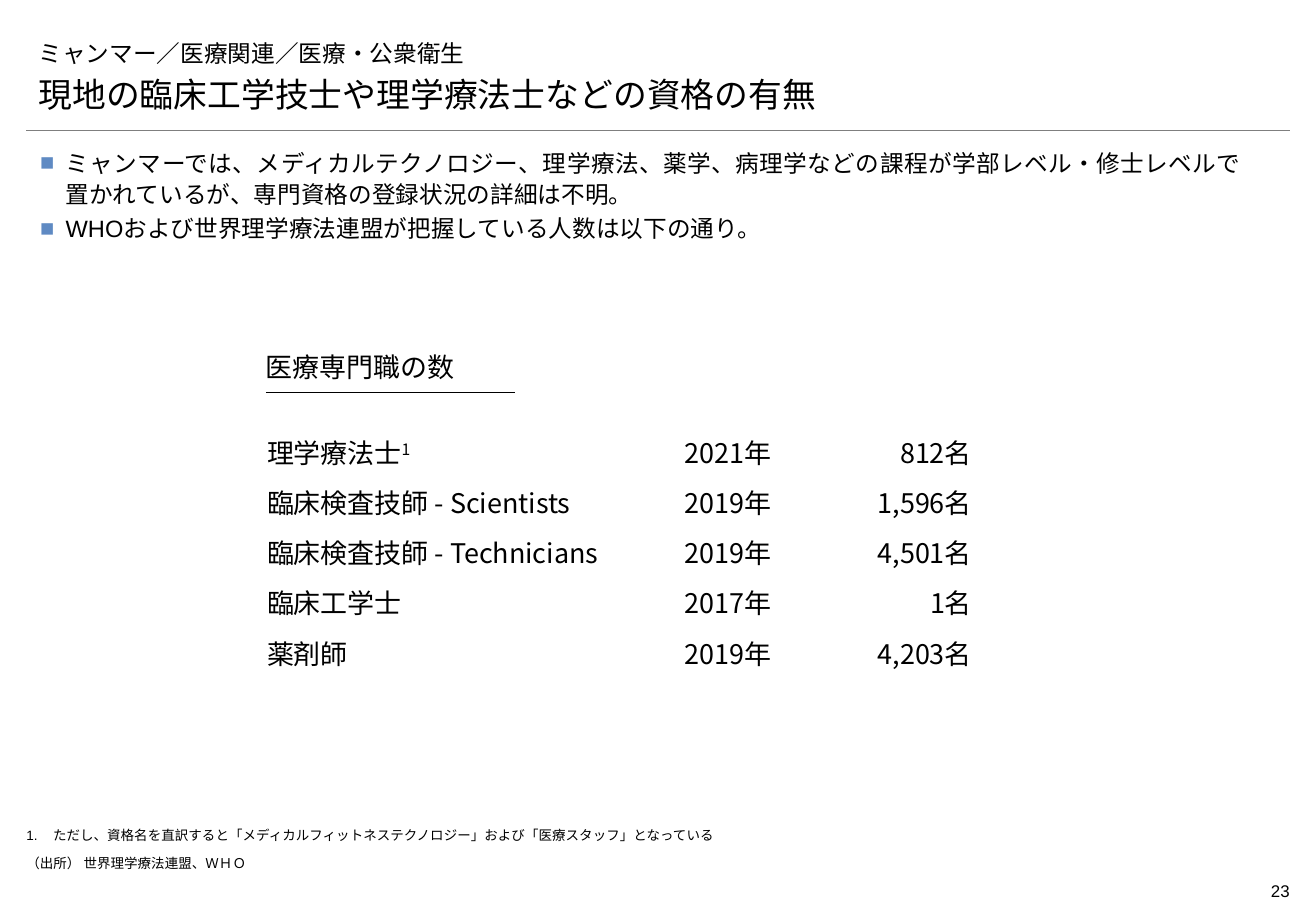
import pptx
import pptx.util
import pptx.dml.color
import pptx.enum.shapes
import pptx.enum.text
import pptx.oxml
import pptx.oxml.ns

ALIGN = pptx.enum.text.PP_ALIGN
ANCHOR = pptx.enum.text.MSO_ANCHOR
NS = pptx.oxml.ns.nsdecls("a")
COLORS = {"text": "000000", "rule": "7F7F7F", "bullet": "5F8AC3"}
CJK = "Noto Sans CJK JP"

prs = pptx.Presentation()
prs.slide_width = pptx.util.Inches(10.83)
prs.slide_height = pptx.util.Inches(7.5)
s = prs.slides.add_slide(prs.slide_layouts[3])


def grid(col, row, cols, rows):
    """Turn cells of a 100 by 100 slide grid into lengths."""
    x, y = prs.slide_width / 100, prs.slide_height / 100
    return int(col * x), int(row * y), int(cols * x), int(rows * y)


def write(tf, text, size=16, font="Arial", align=ALIGN.LEFT, anchor=ANCHOR.TOP,
          insets=(0, 0, 0, 0), bullet=None, indent=0, spacing=1, after=0, sup=None):
    tf.word_wrap = True
    tf.auto_size = pptx.enum.text.MSO_AUTO_SIZE.NONE
    tf.vertical_anchor = anchor
    tf.margin_left, tf.margin_top, tf.margin_right, tf.margin_bottom = map(pptx.util.Inches, insets)
    for i, line in enumerate(text.split("\n")):
        p = tf.add_paragraph() if i else tf.paragraphs[0]
        pPr = p._p.get_or_add_pPr()
        pPr.set("marL", str(pptx.util.Inches(indent)))
        pPr.set("indent", str(-pptx.util.Inches(indent)))
        if bullet:
            pPr.append(pptx.oxml.parse_xml(
                f'<a:buClr {NS}><a:srgbClr val="{COLORS["bullet"]}"/></a:buClr>'))
            pPr.append(pptx.oxml.parse_xml(f'<a:buFont {NS} typeface="Arial"/>'))
            pPr.append(pptx.oxml.parse_xml(f'<a:buChar {NS} char="{bullet}"/>'))
        else:
            pPr.append(pptx.oxml.parse_xml(f"<a:buNone {NS}/>"))
        p.alignment, p.line_spacing = align, spacing
        p.space_before, p.space_after = pptx.util.Pt(0), pptx.util.Pt(after)
        for part in filter(None, (line, sup)):
            r = p.add_run()
            r.text = part
            r.font.size, r.font.name = pptx.util.Pt(size), font
            r.font.color.rgb = pptx.dml.color.RGBColor.from_string(COLORS["text"])
            rPr = r._r.get_or_add_rPr()
            rPr.append(pptx.oxml.parse_xml(f'<a:ea {NS} typeface="{CJK}"/>'))
            if part == sup:
                rPr.set("baseline", "30000")


# Title, headline and bullet list in the placeholders
title, headline, points = s.shapes.title, s.placeholders[1], s.placeholders[2]
title.left, title.top, title.width, title.height = grid(2, 2.8, 96, 5.2)
headline.left, headline.top, headline.width, headline.height = grid(2, 8, 96, 5.2)
points.left, points.top, points.width, points.height = grid(3.05, 16, 91.3, 10.5)

heading_style = {"font": "Montserrat", "anchor": ANCHOR.BOTTOM, "insets": (0.1, 0.05, 0.1, 0.05)}
write(title.text_frame, "ミャンマー／医療関連／医療・公衆衛生", size=14, **heading_style)
write(headline.text_frame, "現地の臨床工学技士や理学療法士などの資格の有無", size=20, **heading_style)
write(points.text_frame,
      "ミャンマーでは、メディカルテクノロジー、理学療法、薬学、病理学などの課程が"
      "学部レベル・修士レベルで置かれているが、専門資格の登録状況の詳細は不明。\n"
      "WHOおよび世界理学療法連盟が把握している人数は以下の通り。",
      size=14, align=ALIGN.JUSTIFY, bullet="■", indent=0.21, spacing=1.1, after=2)

# Rules below the headline and the table heading
for col, row, cols, color, width in [(2, 14.27, 96, "rule", 0.25),
                                     (20.2, 43.07, 18.93, "text", 0.75)]:
    x, y, w, h = grid(col, row, cols, 0)
    rule = s.shapes.add_connector(pptx.enum.shapes.MSO_CONNECTOR.STRAIGHT, x, y, x + w, y)
    rule.line.color.rgb = pptx.dml.color.RGBColor.from_string(COLORS[color])
    rule.line.width = pptx.util.Pt(width)
    rule._element.spPr.append(pptx.oxml.parse_xml(f"<a:effectLst {NS}/>"))

# Table heading, footnote, source and page number
for place, text, style in [
    ((20.2, 37.47, 18.93, 5.6), "医療専門職の数",
     {"font": "Montserrat", "anchor": ANCHOR.BOTTOM, "insets": (0, 0.05, 0, 0.08)}),
    ((2, 90.8, 72, 1.75),
     "1.\tただし、資格名を直訳すると「メディカルフィットネステクノロジー」および「医療スタッフ」となっている",
     {"size": 8, "anchor": ANCHOR.BOTTOM, "indent": 0.22}),
    ((2, 93.87, 93.8, 3.2), "（出所） 世界理学療法連盟、ＷＨＯ", {"size": 8}),
    ((90.8, 96, 7.2, 3.6), "23",
     {"size": 10, "align": ALIGN.RIGHT, "insets": (0, 0.05, 0, 0.05)}),
]:
    write(s.shapes.add_textbox(*grid(*place)).text_frame, text, **style)

# Table of medical professionals
staff = [
    ("理学療法士", "2021年", "812名"),
    ("臨床検査技師 - Scientists", "2019年", "1,596名"),
    ("臨床検査技師 - Technicians", "2019年", "4,501名"),
    ("臨床工学士", "2017年", "1名"),
    ("薬剤師", "2019年", "4,203名"),
]
notes = {"理学療法士": "1"}
col_shares = (31.76, 10.99, 10.99)
table = s.shapes.add_table(len(staff), len(col_shares),
                           *grid(20.2, 46.8, sum(col_shares), 5.5 * len(staff))).table
table.first_row = table.horz_banding = False
for column, share in zip(table.columns, col_shares):
    column.width = grid(0, 0, share, 0)[2]
for i, record in enumerate(staff):
    for j, text in enumerate(record):
        cell = table.cell(i, j)
        cell.fill.background()
        write(cell.text_frame, text, font=CJK, align=ALIGN.RIGHT if j == 2 else ALIGN.LEFT,
              sup=notes.get(text))
        cell.vertical_anchor = ANCHOR.MIDDLE
        cell.margin_left = cell.margin_top = cell.margin_right = pptx.util.Inches(0.01)
        cell.margin_bottom = 0
        # The default table style draws white borders
        for side in ("lnL", "lnR", "lnT", "lnB"):
            cell._tc.tcPr.insert(("lnL", "lnR", "lnT", "lnB").index(side), pptx.oxml.parse_xml(
                f'<a:{side} {NS} w="0"><a:noFill/></a:{side}>'))

prs.save("out.pptx")
